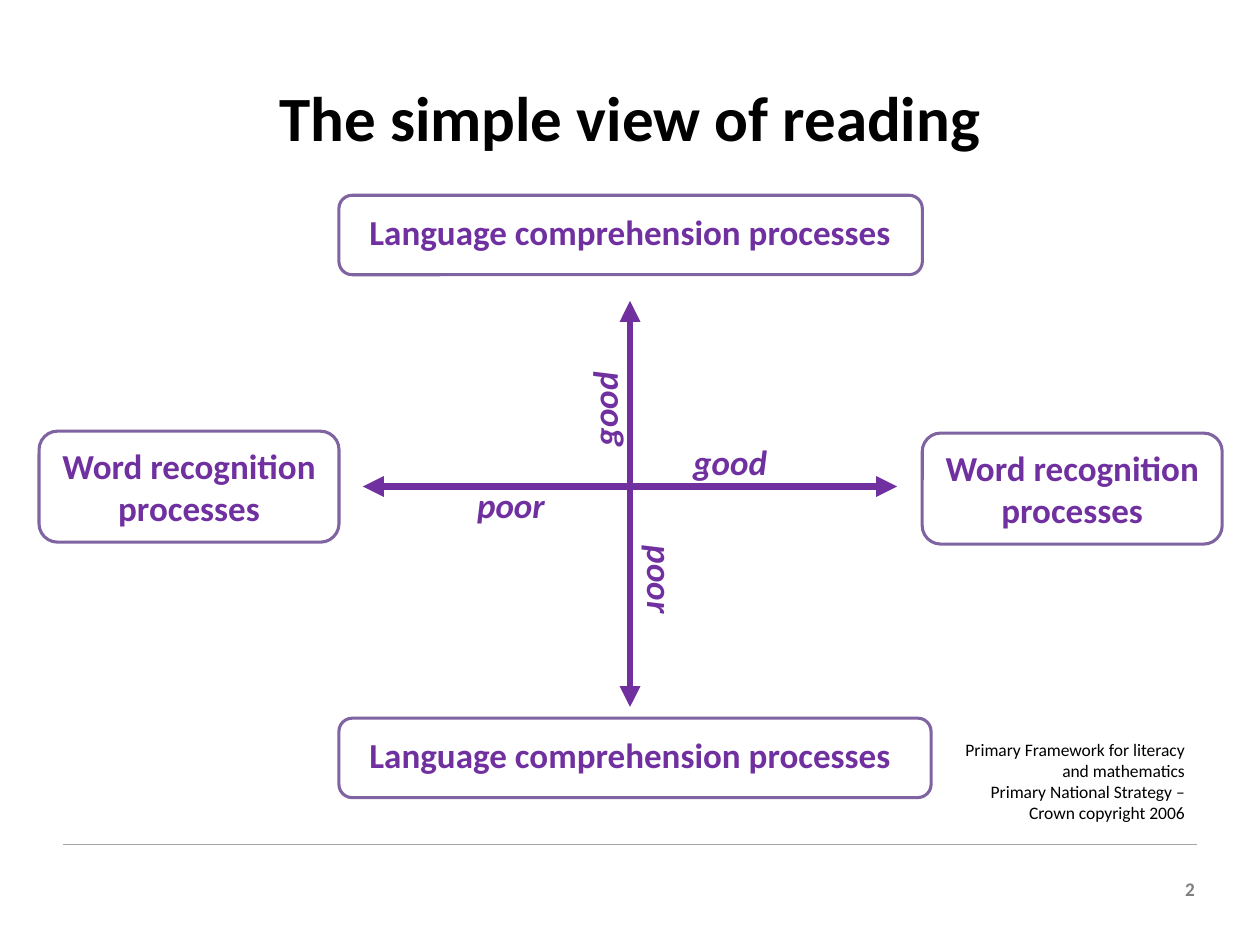
from pptx import Presentation
from pptx.dml.color import RGBColor
from pptx.enum.shapes import MSO_CONNECTOR as Conn, MSO_SHAPE as Shape
from pptx.enum.text import MSO_ANCHOR as Anchor, PP_ALIGN as Align
from pptx.oxml.ns import qn
from pptx.util import Pt
from lxml.etree import SubElement

COLORS = {
    "white": "FFFFFF",
    "black": "000000",
    "purple": "7030A0",
    "outline": "8064A2",
    "rule": "A5A5A5",
    "number": "7F7F7F",
}
FONT = "Calibri"


def rgb(name):
    return RGBColor.from_string(COLORS[name])


def write(tf, text, size=20, color="purple", bold=True, italic=False,
          align=Align.CENTER):
    """Write one paragraph per item; a newline in an item is a line break."""
    items = [text] if isinstance(text, str) else text
    for i, item in enumerate(items):
        p = tf.add_paragraph() if i else tf.paragraphs[0]
        p.text = item
        p.alignment = align
        for r in p.runs:
            r.font.name, r.font.size = FONT, Pt(size)
            r.font.bold, r.font.italic = bold, italic
            r.font.color.rgb = rgb(color)


class SlideBuilder:
    def __init__(self, slide):
        self.s = slide

    def text(self, x, y, w, h, text, rotation=0, anchor=Anchor.TOP,
             inset=7.2, **fmt):
        sp = self.s.shapes.add_textbox(Pt(x), Pt(y), Pt(w), Pt(h))
        sp.rotation = rotation
        tf = sp.text_frame
        tf.word_wrap = True
        tf.vertical_anchor = anchor
        tf.margin_left = tf.margin_right = Pt(inset)
        tf.margin_top = tf.margin_bottom = Pt(3.6)
        write(tf, text, **fmt)

    def box(self, x, y, w, h):
        sp = self.s.shapes.add_shape(Shape.ROUNDED_RECTANGLE,
                                     Pt(x), Pt(y), Pt(w), Pt(h))
        sp.shadow.inherit = False
        sp.fill.solid()
        sp.fill.fore_color.rgb = rgb("white")
        sp.line.color.rgb = rgb("outline")
        sp.line.width = Pt(1.75)

    def line(self, x1, y1, x2, y2, color, width, arrows=False):
        cx = self.s.shapes.add_connector(Conn.STRAIGHT, Pt(x1), Pt(y1),
                                         Pt(x2), Pt(y2))
        cx.line.color.rgb = rgb(color)
        cx.line.width = Pt(width)
        if arrows:
            ln = cx.line._get_or_add_ln()
            for end in ("a:headEnd", "a:tailEnd"):
                SubElement(ln, qn(end), type="triangle")
        SubElement(cx._element.spPr, qn("a:effectLst"))


def main():
    prs = Presentation()
    prs.slide_width, prs.slide_height = Pt(720), Pt(540)
    b = SlideBuilder(prs.slides.add_slide(prs.slide_layouts[6]))

    # Footer rule and slide number
    b.line(36, 482.4, 684, 482.4, "rule", 0.75)
    b.text(662.4, 497.5, 27.4, 20.9, "2", size=11, color="number",
           align=Align.RIGHT)

    # Title and source note
    b.text(36, 21.6, 648, 90, "The simple view of reading", size=36,
           color="black", anchor=Anchor.MIDDLE, inset=3.6)
    b.text(541.4, 419, 142.6, 55.4,
           ["Primary Framework for literacy and mathematics",
            "Primary National Strategy – Crown copyright 2006"],
           size=10, color="black", bold=False, align=Align.RIGHT)

    # Axes
    b.line(360, 172, 360, 404, "purple", 4, arrows=True)
    b.line(512.6, 278, 207.4, 278, "purple", 4, arrows=True)

    # Language boxes at the ends of the vertical axis
    for y, w in ((111.6, 333.4), (410.4, 338.4)):
        b.box(193.7, y, w, 45.4)
        b.text(87.1, y + 5, 545.8, 31.5, "Language comprehension processes")

    # Word boxes at the ends of the horizontal axis
    for x, y in ((527, 247.5), (22.3, 246.4)):
        b.box(x, y, 171.4, 63.4)
        b.text(x, y + 4, 171.4, 55.7, "Word recognition\nprocesses")

    # Good and poor labels along the axes
    for label, x, y, rotation in (
        ("good", 230.4, 218.2, 270),
        ("good", 302.4, 248.4, 0),
        ("poor", 262.8, 315.4, 90),
        ("poor", 177.1, 272.9, 0),
    ):
        b.text(x, y, 229.7, 31.5, label, rotation=rotation, italic=True)

    prs.save("out.pptx")


if __name__ == "__main__":
    main()
